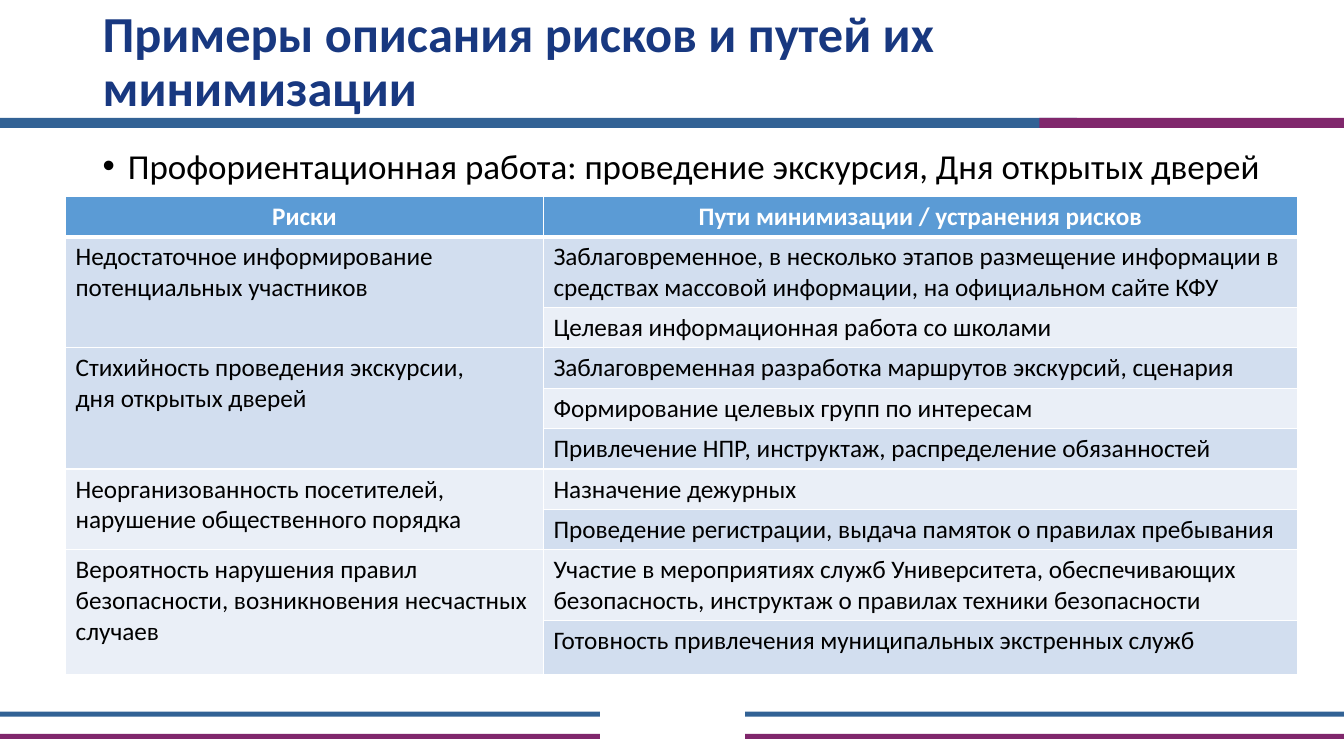
import pptx
import pptx.dml.color
import pptx.enum.shapes
import pptx.enum.text
import pptx.oxml.ns
import pptx.util
from lxml import etree
from pptx.util import Inches

BLUE, PLUM, NAVY = "326295", "80276C", "183880"
WHITE, BLACK, HEADER_BLUE = "FFFFFF", "000000", "5B9BD5"
BANDS = ["D2DEEF", "EAEFF7"]

HEADINGS = ["Риски", "Пути минимизации / устранения рисков"]
# Each risk with the measures that reduce it
RISKS = [
    ("Недостаточное информирование потенциальных участников", [
        "Заблаговременное, в несколько этапов размещение информации в "
        "средствах массовой информации, на официальном сайте КФУ",
        "Целевая информационная работа со школами"]),
    ("Стихийность проведения экскурсии,\nдня открытых дверей", [
        "Заблаговременная разработка маршрутов экскурсий, сценария",
        "Формирование целевых групп по интересам",
        "Привлечение НПР, инструктаж, распределение обязанностей"]),
    ("Неорганизованность посетителей, нарушение общественного порядка", [
        "Назначение дежурных",
        "Проведение регистрации, выдача памяток о правилах пребывания"]),
    ("Вероятность нарушения правил безопасности, возникновения несчастных случаев", [
        "Участие в мероприятиях служб Университета, обеспечивающих "
        "безопасность, инструктаж о правилах техники безопасности",
        "Готовность привлечения муниципальных экстренных служб"]),
]
COLUMN_WIDTHS = [4.74, 7.48]
ROW_HEIGHTS = [0.38, 0.66, 0.38, 0.38, 0.28, 0.38, 0.38, 0.3, 0.66, 0.54]


def rgb(color):
    return pptx.dml.color.RGBColor.from_string(color)


def set_font(paragraph, size, color, bold=False):
    font = paragraph.font
    font.name = "Calibri"
    font.size = pptx.util.Pt(size)
    font.bold = bold
    font.color.rgb = rgb(color)


def add_bar(slide, left, top, width, height, color):
    bar = slide.shapes.add_shape(
        pptx.enum.shapes.MSO_SHAPE.RECTANGLE,
        Inches(left), Inches(top), Inches(width), Inches(height))
    bar.shadow.inherit = False
    bar.fill.solid()
    bar.fill.fore_color.rgb = rgb(color)
    bar.line.fill.background()


def add_line_of_text(slide, box, text, size, color, bold=False, bullet=False,
                     anchor=pptx.enum.text.MSO_ANCHOR.TOP):
    frame = slide.shapes.add_textbox(*map(Inches, box)).text_frame
    frame.word_wrap = True
    frame.vertical_anchor = anchor
    paragraph = frame.paragraphs[0]
    paragraph.text = text
    paragraph.line_spacing = 0.9
    if bullet:
        properties = paragraph._p.get_or_add_pPr()
        properties.set("marL", str(Inches(0.25)))
        properties.set("indent", str(-Inches(0.25)))
        etree.SubElement(properties, pptx.oxml.ns.qn("a:buFont"), typeface="Arial")
        etree.SubElement(properties, pptx.oxml.ns.qn("a:buChar"), char="•")
    set_font(paragraph, size, color, bold)


def add_borders(cell, bottom_width=1, top_width=1):
    properties = cell._tc.get_or_add_tcPr()
    widths = {"lnL": 1, "lnR": 1, "lnT": top_width, "lnB": bottom_width}
    for side, width in widths.items():
        border = etree.SubElement(properties, pptx.oxml.ns.qn("a:" + side),
                                  w=str(pptx.util.Pt(width)))
        fill = etree.SubElement(border, pptx.oxml.ns.qn("a:solidFill"))
        etree.SubElement(fill, pptx.oxml.ns.qn("a:srgbClr"), val=WHITE)


def fill_cell(cell, text, color, heading=False):
    cell.text = text
    cell.fill.solid()
    cell.fill.fore_color.rgb = rgb(color)
    for paragraph in cell.text_frame.paragraphs:
        if heading:
            paragraph.alignment = pptx.enum.text.PP_ALIGN.CENTER
        set_font(paragraph, 18, WHITE if heading else BLACK, heading)


def add_risk_table(slide):
    table = slide.shapes.add_table(
        len(ROW_HEIGHTS), len(COLUMN_WIDTHS), Inches(0.65), Inches(1.95),
        Inches(sum(COLUMN_WIDTHS)), Inches(sum(ROW_HEIGHTS))).table
    for column, width in zip(table.columns, COLUMN_WIDTHS):
        column.width = Inches(width)
    for index, (row, height) in enumerate(zip(table.rows, ROW_HEIGHTS)):
        row.height = Inches(height)
        for cell in row.cells:
            add_borders(cell, bottom_width=3 if index == 0 else 1,
                        top_width=3 if index == 1 else 1)

    for column, heading in enumerate(HEADINGS):
        fill_cell(table.cell(0, column), heading, HEADER_BLUE, heading=True)

    # A risk spans the rows of its measures; row colours alternate
    first = 1
    for risk, measures in RISKS:
        for row, measure in enumerate(measures, first):
            band = BANDS[(row - 1) % 2]
            fill_cell(table.cell(row, 0), "", BANDS[(first - 1) % 2])
            fill_cell(table.cell(row, 1), measure, band)
        last = first + len(measures) - 1
        table.cell(first, 0).merge(table.cell(last, 0))
        fill_cell(table.cell(first, 0), risk, BANDS[(first - 1) % 2])
        first = last + 1


def main():
    deck = pptx.Presentation()
    deck.slide_width, deck.slide_height = Inches(13.33), Inches(7.5)
    slide = deck.slides.add_slide(deck.slide_layouts[6])

    # Stripe under the title
    add_bar(slide, 0, 1.17, 10.68, 0.1, BLUE)
    add_bar(slide, 10.31, 1.17, 3.02, 0.1, PLUM)

    # Paired footer stripes
    for left in (0, 7.39):
        for top, color in ((7.06, BLUE), (7.28, PLUM)):
            add_bar(slide, left, top, 5.95, 0.05, color)

    # Title and topic
    add_line_of_text(slide, (0.92, 0.23, 11.5, 0.8),
                     "Примеры описания рисков и путей их минимизации",
                     36, NAVY, bold=True, anchor=pptx.enum.text.MSO_ANCHOR.MIDDLE)
    add_line_of_text(slide, (0.92, 1.43, 12.07, 0.52),
                     "Профориентационная работа: проведение экскурсия, Дня открытых дверей",
                     25, BLACK, bullet=True)

    add_risk_table(slide)
    deck.save("out.pptx")


if __name__ == "__main__":
    main()
